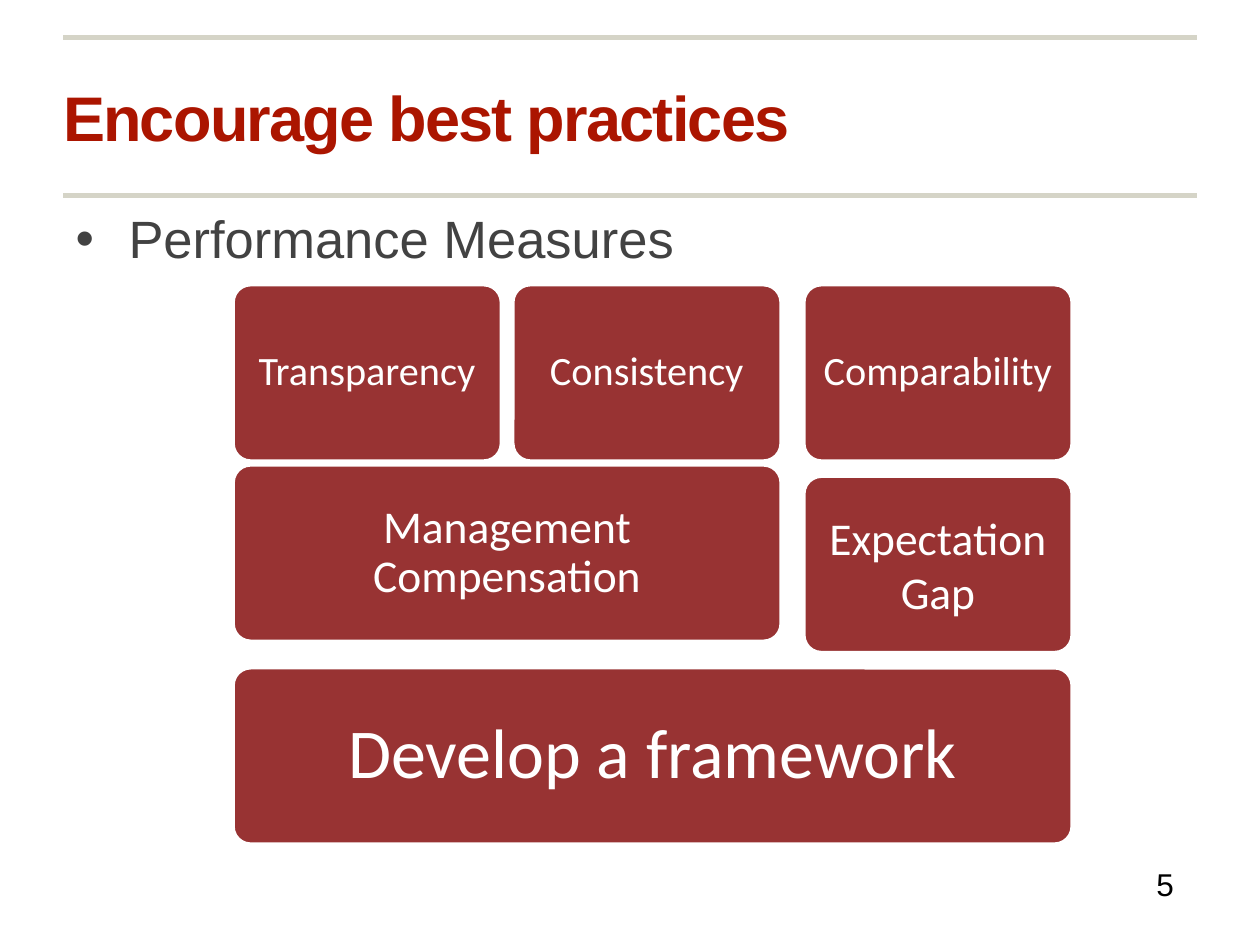
"""Build the slide on best practices, with its blocks of performance measures."""
import pptx
import pptx.dml.color
import pptx.enum.shapes
import pptx.enum.text
import pptx.oxml
import pptx.oxml.ns
import pptx.util
from lxml import etree

Inches = pptx.util.Inches
Pt = pptx.util.Pt
qn = pptx.oxml.ns.qn
ALIGN = pptx.enum.text.PP_ALIGN
ANCHOR = pptx.enum.text.MSO_ANCHOR

HEADING = "Encourage best practices"
TOPICS = ["Performance Measures"]
PAGE_NUMBER = "5"

# text, first column, columns spanned, top, size name, line spacing
BLOCKS = [
    ("Develop a framework", 0, 3, 5.3, "foundation", 0.9),
    ("Management Compensation", 0, 2, 3.69, "middle", 0.9),
    ("Transparency", 0, 1, 2.26, "top", 0.9),
    ("Consistency", 1, 1, 2.26, "top", 0.9),
    ("Expectation Gap", 2, 1, 3.78, "middle", 1.0),
    ("Comparability", 2, 1, 2.26, "top", 0.9),
]
COLUMN_LEFTS = (1.85, 4.07, 6.38)
COLUMN_WIDTH = 2.13
BLOCK_HEIGHT = 1.4
RULE_TOPS = (0.3, 1.55)
MARGIN, CONTENT_WIDTH = 0.5, 9

THEME = {
    "font": "Arial",
    "block_font": "Calibri",
    "colors": {"heading": "AB1500", "body": "424242", "rule": "D5D4C7",
               "block": "983333", "white": "FFFFFF", "black": "000000"},
    "sizes": {"heading": 36, "body": 30, "page": 18,
              "foundation": 40, "middle": 26, "top": 23},
    "insets": {"foundation": 0.17, "middle": 0.11, "top": 0.1},
}


def color(name):
    return pptx.dml.color.RGBColor.from_string(THEME["colors"][name])


def style(paragraph, size, color_name, font="font", bold=False):
    paragraph.font.name = THEME[font]
    paragraph.font.size = Pt(THEME["sizes"][size])
    paragraph.font.color.rgb = color(color_name)
    paragraph.font.bold = bold


def place(shape, left, top, width, height):
    shape.left, shape.top = Inches(left), Inches(top)
    shape.width, shape.height = Inches(width), Inches(height)


def set_insets(frame, inset):
    frame.margin_left = frame.margin_right = Inches(inset)
    frame.margin_top = frame.margin_bottom = Inches(inset)


def add_rule(slide, top):
    rule = slide.shapes.add_connector(
        pptx.enum.shapes.MSO_CONNECTOR.STRAIGHT, Inches(MARGIN), Inches(top),
        Inches(MARGIN + CONTENT_WIDTH), Inches(top))
    rule.line.color.rgb = color("rule")
    rule.line.width = Pt(3)
    etree.SubElement(rule._element.spPr, qn("a:effectLst"))


def add_heading(slide):
    heading = slide.shapes.title
    place(heading, MARGIN, 0.36, CONTENT_WIDTH, 1.12)
    frame = heading.text_frame
    frame.text = HEADING
    frame.vertical_anchor = ANCHOR.MIDDLE
    set_insets(frame, 0)
    paragraph = frame.paragraphs[0]
    paragraph.alignment = ALIGN.LEFT
    style(paragraph, "heading", "heading", bold=True)
    paragraph._p.pPr.find(qn("a:defRPr")).set("spc", "-100")


def add_topics(slide):
    body = slide.placeholders[1]
    place(body, MARGIN, 1.63, CONTENT_WIDTH, 4.95)
    body.text_frame.text = "\n".join(TOPICS)
    for index, paragraph in enumerate(body.text_frame.paragraphs):
        paragraph.line_spacing = Pt(33)
        paragraph.space_before = Pt(6 if index else 0)
        properties = paragraph._p.get_or_add_pPr()
        properties.set("marL", str(Inches(0.42)))
        properties.set("indent", str(-Inches(0.42)))
        etree.SubElement(properties, qn("a:buFont"), typeface=THEME["font"])
        etree.SubElement(properties, qn("a:buChar"), char="•")
        style(paragraph, "body", "body")


def add_block(slide, text, column, span, top, size, spacing):
    left = COLUMN_LEFTS[column]
    width = COLUMN_LEFTS[column + span - 1] + COLUMN_WIDTH - left
    block = slide.shapes.add_shape(
        pptx.enum.shapes.MSO_SHAPE.ROUNDED_RECTANGLE, Inches(left), Inches(top),
        Inches(width), Inches(BLOCK_HEIGHT))
    block.adjustments[0] = 0.1
    block.shadow.inherit = False
    block.fill.solid()
    block.fill.fore_color.rgb = color("block")
    block.line.color.rgb = color("white")
    block.line.width = Pt(2)
    frame = block.text_frame
    frame.text = text
    frame.word_wrap = True
    frame.vertical_anchor = ANCHOR.MIDDLE
    set_insets(frame, THEME["insets"][size])
    paragraph = frame.paragraphs[0]
    paragraph.alignment = ALIGN.CENTER
    paragraph.line_spacing = spacing
    style(paragraph, size, "white", font="block_font")


def add_page_number(slide):
    page = slide.shapes.add_textbox(
        Inches(9.08), Inches(6.82), Inches(0.34), Inches(0.4))
    page.text_frame.text = PAGE_NUMBER
    page.text_frame.word_wrap = False
    style(page.text_frame.paragraphs[0], "page", "black")


def main():
    deck = pptx.Presentation()
    deck.slide_width, deck.slide_height = Inches(10), Inches(7.5)
    slide = deck.slides.add_slide(deck.slide_layouts[1])
    for top in RULE_TOPS:
        add_rule(slide, top)
    add_heading(slide)
    add_topics(slide)
    add_page_number(slide)
    for block in BLOCKS:
        add_block(slide, *block)
    deck.save("out.pptx")


if __name__ == "__main__":
    main()
